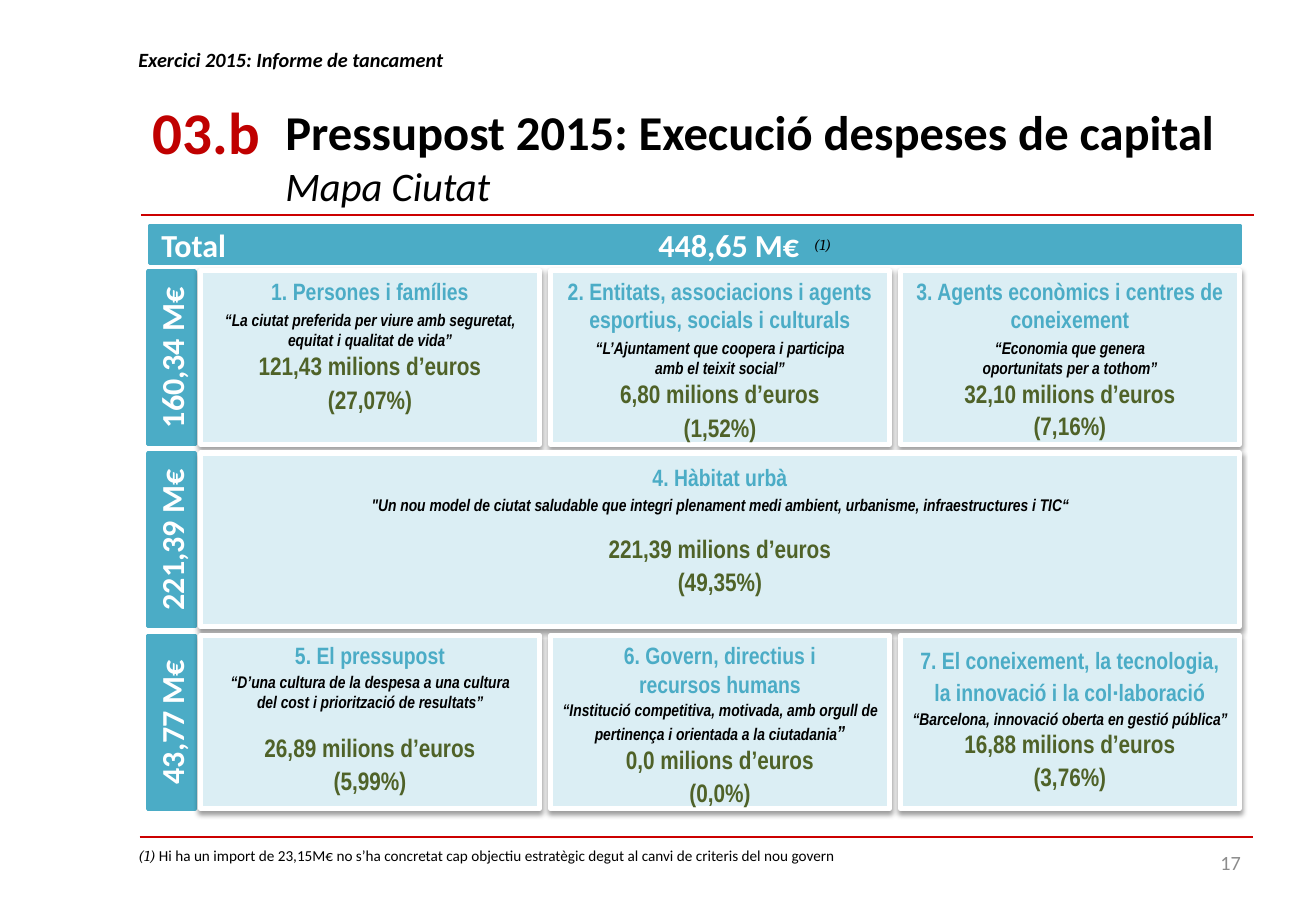
from dataclasses import dataclass
from typing import Any

from lxml.etree import SubElement
from pptx import Presentation
from pptx.dml.color import RGBColor
from pptx.enum.shapes import MSO_CONNECTOR, MSO_SHAPE
from pptx.enum.text import MSO_ANCHOR as ANCHOR, PP_ALIGN as ALIGN
from pptx.oxml.ns import qn
from pptx.util import Inches, Pt

BLACK = RGBColor(0x00, 0x00, 0x00)
WHITE = RGBColor(0xFF, 0xFF, 0xFF)
GREY = RGBColor(0x8C, 0x8C, 0x8C)
RED = RGBColor(0xC0, 0x00, 0x00)
RULE_RED = RGBColor(0xCC, 0x00, 0x00)
TEAL = RGBColor(0x4B, 0xAC, 0xC6)
PALE = RGBColor(0xDB, 0xEE, 0xF4)
OLIVE = RGBColor(0x4F, 0x62, 0x28)

CARD_FONT = {"name": "Arial Narrow", "bold": True}
HEADING = CARD_FONT | {"size": Pt(14), "color": TEAL}
QUOTE = CARD_FONT | {"size": Pt(10), "color": BLACK, "italic": True}
AMOUNT = CARD_FONT | {"size": Pt(15), "color": OLIVE}
BAND = {"name": "Calibri", "size": Pt(19), "color": WHITE, "bold": True}
NOTE_MARK = {"name": "Cambria", "size": Pt(9), "color": BLACK, "italic": True}
NOTE = {"name": "Calibri", "size": Pt(9), "color": BLACK}

LEFT, COL_PITCH = 1.65, 2.88
TOP, ROW_PITCH = 2.23, 1.5
CARD_W, CARD_H = 2.79, 1.43
LABEL_H, LABEL_CENTRE = 0.39, 1.41


@dataclass
class Card:
    row: int
    col: int
    heading: list[str]
    quote: list[str]
    amount: str
    share: str
    quote_gap: float = 2.4
    amount_gap: float = 0
    share_gap: float = 1.2
    heading_spacing: float = 1
    quote_spacing: float = 1
    span: int = 1
    closing: str = ""


@dataclass
class Label:
    text: str
    box: tuple[float, float, float, float]
    fmt: dict[str, Any]
    align: ALIGN = ALIGN.LEFT
    anchor: ANCHOR = ANCHOR.MIDDLE


CARDS = [
    Card(0, 0, ["1. Persones i famílies"],
         ["“La ciutat preferida per viure amb seguretat, equitat i qualitat de vida”"],
         "121,43", "27,07%", share_gap=2.4),
    Card(0, 1, ["2. Entitats, associacions i agents esportius, socials i culturals"],
         ["“L’Ajuntament que coopera i participa", "amb el teixit social”"],
         "6,80", "1,52%", share_gap=2.4),
    Card(0, 2, ["3. Agents econòmics i centres de coneixement"],
         ["“Economia que genera", "oportunitats per a tothom”"], "32,10", "7,16%"),
    Card(1, 0, ["4. Hàbitat urbà"],
         ['"Un nou model de ciutat saludable que integri plenament medi ambient, '
          "urbanisme, infraestructures i TIC“"],
         "221,39", "49,35%", quote_gap=0, amount_gap=11,
         heading_spacing=1.15, quote_spacing=1.15, span=3),
    Card(2, 0, ["5. El pressupost"],
         ["“D’una cultura de la despesa a una cultura",
          "del cost i priorització de resultats”"],
         "26,89", "5,99%", quote_gap=1.2, amount_gap=12),
    Card(2, 1, ["6. Govern, directius i", "recursos humans"],
         ["“Institució competitiva, motivada, amb orgull de pertinença "
          "i orientada a la ciutadania"],
         "0,0", "0,0%", quote_gap=1.2, closing="”"),
    Card(2, 2, ["7. El coneixement, la tecnologia, la innovació i la col·laboració"],
         ["“Barcelona, innovació oberta en gestió pública”"],
         "16,88", "3,76%", quote_gap=1.2, heading_spacing=1.15),
]

ROW_TOTALS = ["160,34 M€", "221,39 M€", "43,77 M€"]

LABELS = [
    Label("Exercici 2015: Informe de tancament", (1.04, 0.34, 4.06, 0.3),
          {"name": "Calibri", "size": Pt(12), "color": BLACK, "bold": True, "italic": True},
          anchor=ANCHOR.TOP),
    Label("Pressupost 2015: Execució despeses de capital", (2.25, 0.84, 8.09, 0.47),
          {"name": "Calibri", "size": Pt(28.8), "color": BLACK, "bold": True}),
    Label("03.b", (1.16, 0.84, 1.18, 0.47),
          {"name": "Calibri", "size": Pt(35), "color": RED, "bold": True}),
    Label("Mapa Ciutat", (2.25, 1.29, 8.09, 0.47),
          {"name": "Calibri", "size": Pt(24), "color": BLACK, "italic": True}),
    Label("17", (7.78, 6.9, 2.53, 0.4),
          {"name": "Calibri", "size": Pt(12), "color": GREY}, ALIGN.RIGHT),
    Label("(1)", (6.6, 1.89, 0.41, 0.25), NOTE_MARK, anchor=ANCHOR.TOP),
]


def add_run(p, text: str, fmt: dict[str, Any]) -> None:
    r = p.add_run()
    r.text = text
    for key, value in fmt.items():
        if key == "color":
            r.font.color.rgb = value
        else:
            setattr(r.font, key, value)


def add_label(slide, label: Label):
    tf = slide.shapes.add_textbox(*map(Inches, label.box)).text_frame
    tf.word_wrap = True
    tf.vertical_anchor = label.anchor
    p = tf.paragraphs[0]
    p.alignment = label.align
    add_run(p, label.text, label.fmt)
    return p


def add_rule(slide, x: float, y: float) -> None:
    line = slide.shapes.add_connector(
        MSO_CONNECTOR.STRAIGHT, *map(Inches, (x, y, x + 9.16, y)))
    line.line.color.rgb = RULE_RED
    line.line.width = Pt(1)
    SubElement(line._element.spPr, qn("a:effectLst"))


def add_box(slide, box: tuple[float, ...], fill: RGBColor, border: RGBColor,
            width: float, anchor: ANCHOR):
    sp = slide.shapes.add_shape(MSO_SHAPE.RECTANGLE, *map(Inches, box))
    sp.shadow.inherit = False
    sp.fill.solid()
    sp.fill.fore_color.rgb = fill
    sp.line.color.rgb = border
    sp.line.width = Pt(width)
    sp.text_frame.word_wrap = True
    sp.text_frame.vertical_anchor = anchor
    return sp


def add_shadow(sp) -> None:
    effects = sp._element.spPr.find(qn("a:effectLst"))
    shadow = SubElement(effects, qn("a:outerShdw"), blurRad=str(Pt(3.1)),
                        dist=str(Pt(1.6)), dir="5400000", rotWithShape="0")
    color = SubElement(shadow, qn("a:srgbClr"), val="000000")
    SubElement(color, qn("a:alpha"), val="38000")


def add_card(slide, card: Card) -> None:
    box = (LEFT + card.col * COL_PITCH, TOP + card.row * ROW_PITCH,
           CARD_W + (card.span - 1) * COL_PITCH, CARD_H)
    sp = add_box(slide, box, PALE, WHITE, 3, ANCHOR.TOP)
    add_shadow(sp)
    tf = sp.text_frame
    p = tf.paragraphs[0]
    groups = [
        (card.heading, HEADING, 0, card.heading_spacing),
        (card.quote, QUOTE, card.quote_gap, card.quote_spacing),
        ([f"{card.amount} milions d’euros"], AMOUNT, card.amount_gap, 1),
        ([f"({card.share})"], AMOUNT, card.share_gap, 1),
    ]
    for lines, fmt, gap, spacing in groups:
        for i, text in enumerate(lines):
            if p.runs:
                p = tf.add_paragraph()
            p.alignment = ALIGN.CENTER
            p.line_spacing = spacing
            if gap and i == 0:
                p.space_before = Pt(gap)
            add_run(p, text, fmt)
        if fmt is QUOTE and card.closing:
            add_run(p, card.closing, QUOTE | {"size": Pt(12)})


def add_row_total(slide, row: int, text: str) -> None:
    top = TOP + row * ROW_PITCH + (CARD_H - LABEL_H) / 2
    box = (LABEL_CENTRE - CARD_H / 2, top, CARD_H, LABEL_H)
    sp = add_box(slide, box, TEAL, TEAL, 2, ANCHOR.MIDDLE)
    sp.rotation = 270
    p = sp.text_frame.paragraphs[0]
    p.alignment = ALIGN.CENTER
    add_run(p, text, BAND)


def add_total_band(slide) -> None:
    sp = add_box(slide, (1.23, 1.86, 8.98, 0.31), TEAL, TEAL, 2, ANCHOR.MIDDLE)
    p = sp.text_frame.paragraphs[0]
    p.alignment = ALIGN.LEFT
    tabs = SubElement(p._p.get_or_add_pPr(), qn("a:tabLst"))
    SubElement(tabs, qn("a:tab"), pos=str(Inches(4.09)), algn="l")
    add_run(p, "Total\t448,65 M€", BAND)


def main() -> None:
    prs = Presentation()
    prs.slide_width, prs.slide_height = Inches(10.83), Inches(7.5)
    slide = prs.slides.add_slide(prs.slide_layouts[6])
    add_rule(slide, 1.16, 1.77)
    add_rule(slide, 1.15, 6.89)
    for row, text in enumerate(ROW_TOTALS):
        add_row_total(slide, row, text)
    add_total_band(slide)
    for card in CARDS:
        add_card(slide, card)
    for label in LABELS:
        add_label(slide, label)
    note = add_label(slide, Label("(1) ", (1.04, 6.92, 7.79, 0.25), NOTE_MARK,
                                  anchor=ANCHOR.TOP))
    add_run(note, "Hi ha un import de 23,15M€ no s’ha concretat cap objectiu "
            "estratègic degut al canvi de criteris del nou govern", NOTE)
    prs.save("out.pptx")


if __name__ == "__main__":
    main()
